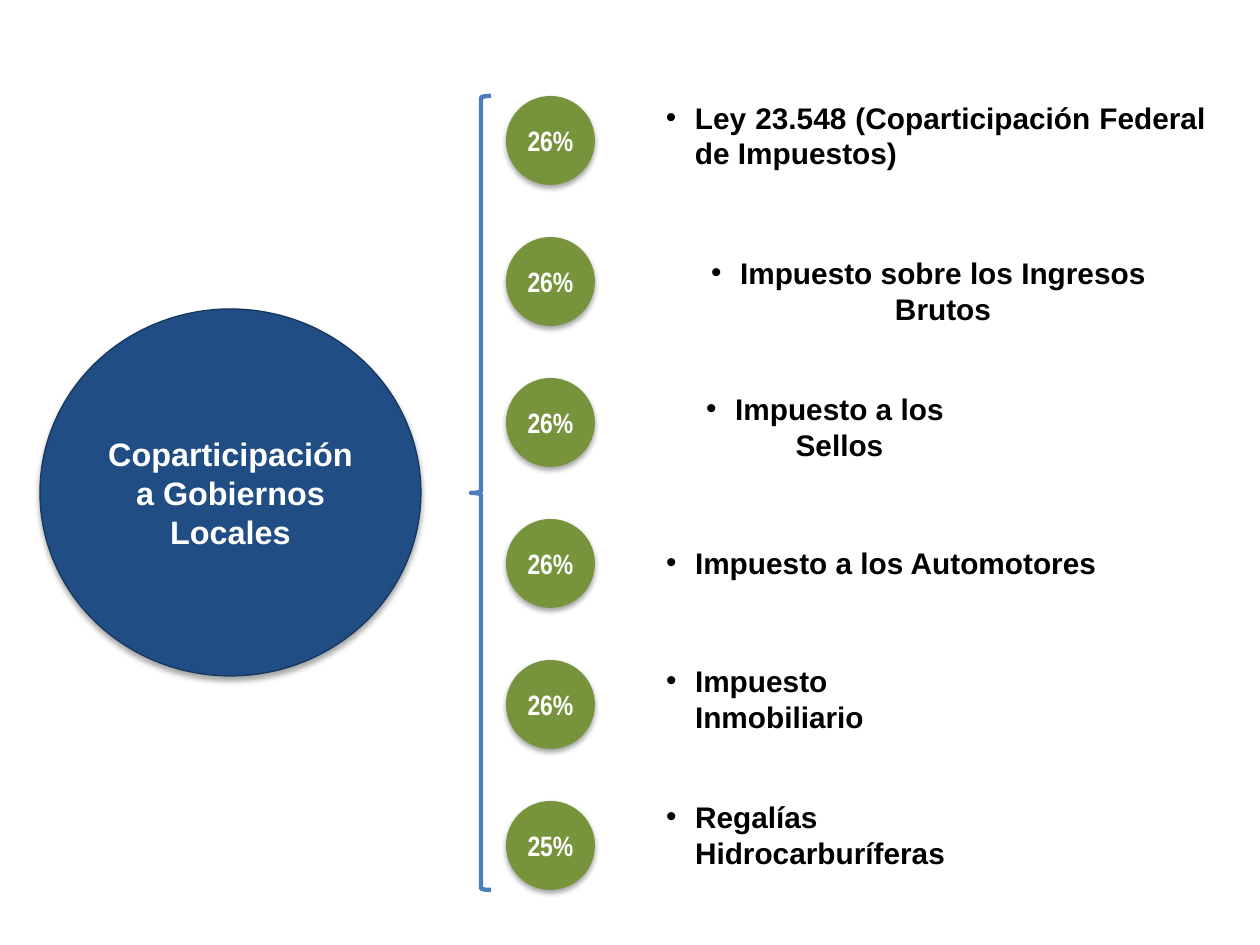
from lxml import etree
from pptx import Presentation
from pptx.dml.color import RGBColor
from pptx.enum.shapes import MSO_SHAPE
from pptx.enum.text import MSO_ANCHOR, PP_ALIGN
from pptx.oxml import parse_xml
from pptx.oxml.ns import nsdecls
from pptx.util import Inches, Pt

OVAL, BRACE = MSO_SHAPE.OVAL, MSO_SHAPE.LEFT_BRACE
MIDDLE = MSO_ANCHOR.MIDDLE
LEFT, CENTER, JUSTIFY = PP_ALIGN.LEFT, PP_ALIGN.CENTER, PP_ALIGN.JUSTIFY
PX = Inches(1) / 126


def write(shape, text, size, color, font="Arial", align=CENTER, inset=(13, 6), bullet=False):
    """Put one bold paragraph, centred vertically, in a shape."""
    frame = shape.text_frame
    frame.word_wrap = True
    frame.vertical_anchor = MIDDLE
    frame.margin_left = frame.margin_right = round(inset[0] * PX)
    frame.margin_top = frame.margin_bottom = round(inset[1] * PX)
    para = frame.paragraphs[0]
    para.alignment = align
    if bullet:
        props = para._p.get_or_add_pPr()
        indent = round(29 * PX)
        props.set("marL", str(indent))
        props.set("indent", str(-indent))
        props.append(parse_xml(f'<a:buFont {nsdecls("a")} typeface="Arial"/>'))
        etree.SubElement(props, props[-1].tag.replace("buFont", "buChar"), char="•")
    span = para.add_run()
    span.text = text
    span.font.name = font
    span.font.size = Pt(size)
    span.font.bold = True
    span.font.color.rgb = RGBColor.from_string(color)


def add_disc(left, top, width, height, fill):
    """Add a filled ellipse with a soft shadow below it."""
    disc = page.shapes.add_shape(OVAL, *(round(n * PX) for n in (left, top, width, height)))
    disc.fill.solid()
    disc.fill.fore_color.rgb = RGBColor.from_string(fill)
    disc.line.fill.background()
    disc._element.spPr.append(parse_xml(
        f'<a:effectLst {nsdecls("a")}>'
        f'<a:outerShdw blurRad="{Pt(3.1)}" dist="{Pt(1.8)}" dir="5400000" rotWithShape="0">'
        '<a:srgbClr val="000000"><a:alpha val="35000"/></a:srgbClr>'
        '</a:outerShdw></a:effectLst>'))
    return disc


deck = Presentation()
deck.slide_width, deck.slide_height = Inches(10), Inches(7.5)
page = deck.slides.add_slide(deck.slide_layouts[6])

total = add_disc(40, 309, 381, 367, "204D84")
total.line.color.rgb = RGBColor.from_string("17375E")
total.line.width = Pt(0.75)
write(total, "Coparticipación a Gobiernos Locales", 18.5, "FFFFFF", inset=(8, 6))

brace = page.shapes.add_shape(BRACE, *(round(n * PX) for n in (471, 96, 20, 794)))
brace.shadow.inherit = False
brace.fill.background()
brace.line.color.rgb = RGBColor.from_string("4B7EBC")
brace.line.width = Pt(2.5)

# share, tax, label width, alignment
taxes = [
    ("26%", "Ley 23.548 (Coparticipación Federal de Impuestos)", 566, JUSTIFY),
    ("26%", "Impuesto sobre los Ingresos Brutos", 551, CENTER),
    ("26%", "Impuesto a los Sellos", 344, CENTER),
    ("26%", "Impuesto a los Automotores", 460, LEFT),
    ("26%", "Impuesto Inmobiliario", 358, LEFT),
    ("25%", "Regalías Hidrocarburíferas", 421, LEFT),
]
for row, (share, tax, width, align) in enumerate(taxes):
    top, height = (130 + 136 * row, 49) if row else (93, 84)
    label = page.shapes.add_textbox(*(round(n * PX) for n in (653, top, width, height)))
    write(label, tax, 17, "000000", align=align, bullet=True)
    disc = add_disc(506, 96 + 141 * row, 89, 89, "77933C")
    write(disc, share, 16, "FFFFFF", font="Arial Narrow", inset=(0, 0))

deck.save("out.pptx")
